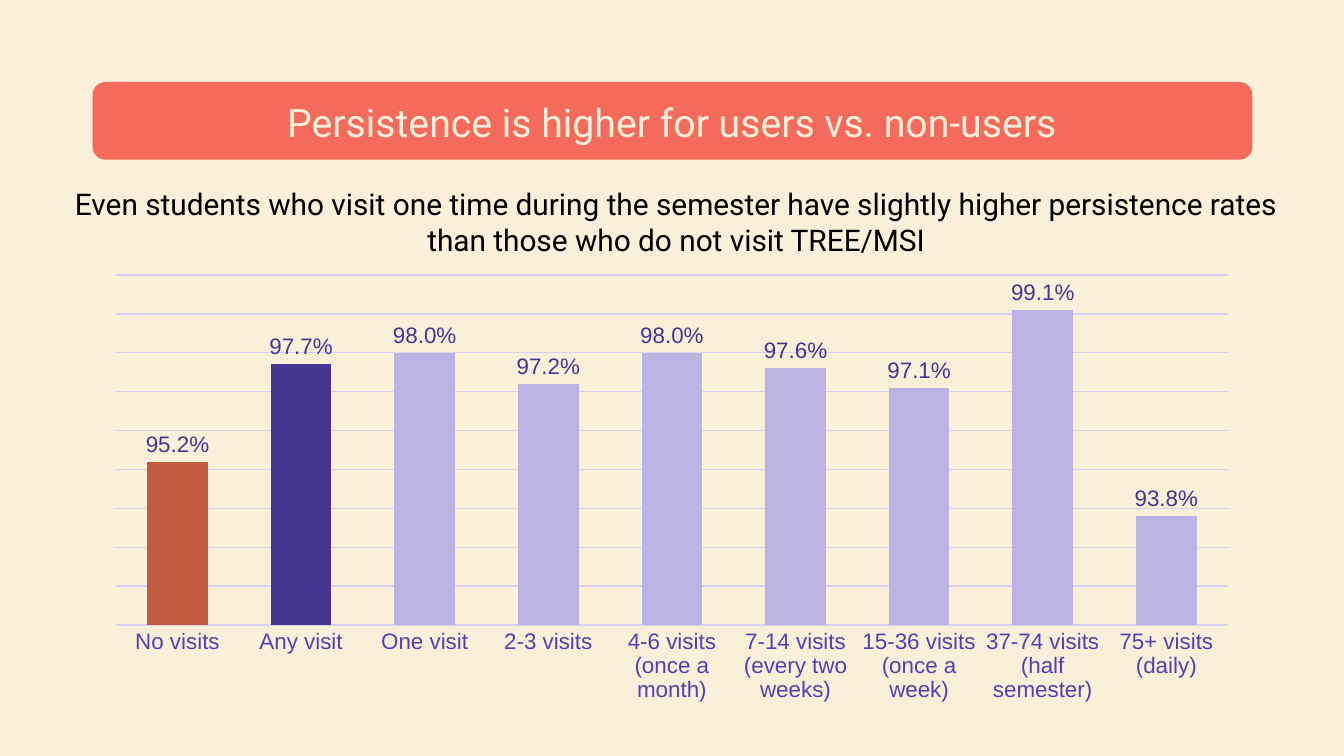
import pptx
import pptx.chart.data
import pptx.dml.color
import pptx.enum.chart
import pptx.enum.shapes
import pptx.enum.text
import pptx.oxml
import pptx.util
from pptx.util import Cm

COLORS = {
    "background": "FAEFD9",
    "banner": "F46B5C",
    "text": "000000",
    "bar": "BBB4E3",
    "no_visits": "C15C41",
    "any_visit": "453691",
    "value": "453691",
    "category": "5341B0",
    "grid": "D6D2EE",
}

PERSISTENCE = {
    "No visits": 0.952,
    "Any visit": 0.977,
    "One visit": 0.98,
    "2-3 visits": 0.972,
    "4-6 visits (once a month)": 0.98,
    "7-14 visits (every two weeks)": 0.976,
    "15-36 visits (once a week)": 0.971,
    "37-74 visits (half semester)": 0.991,
    "75+ visits (daily)": 0.938,
}


def rgb(name):
    return pptx.dml.color.RGBColor.from_string(COLORS[name])


def set_fill(fill, color):
    fill.solid()
    fill.fore_color.rgb = rgb(color)


def set_font(font, name, size, color):
    font.name = name
    font.size = pptx.util.Pt(size)
    font.color.rgb = rgb(color)


def set_text(sp, text, size, color, anchor):
    tf = sp.text_frame
    tf.text = text
    tf.word_wrap = True
    tf.auto_size = pptx.enum.text.MSO_AUTO_SIZE.NONE
    tf.vertical_anchor = anchor
    p = tf.paragraphs[0]
    p.alignment = pptx.enum.text.PP_ALIGN.CENTER
    set_font(p.runs[0].font, "Roboto", size, color)
    return tf


def add_banner(s):
    sp = s.shapes.add_shape(pptx.enum.shapes.MSO_SHAPE.ROUNDED_RECTANGLE,
                            Cm(1.75), Cm(1.55), Cm(21.92), Cm(1.47))
    sp.shadow.inherit = False
    set_fill(sp.fill, "banner")
    sp.line.fill.background()
    # Send the banner behind the title
    s.shapes.title._element.addprevious(sp._element)


def add_title(s, text):
    sp = s.shapes.title
    sp.left, sp.top, sp.width, sp.height = Cm(2), Cm(1.5), Cm(21.4), Cm(1.6)
    tf = set_text(sp, text, 21, "background", pptx.enum.text.MSO_ANCHOR.MIDDLE)
    tf.margin_left = tf.margin_right = Cm(0.25)
    tf.margin_top = tf.margin_bottom = Cm(0.25)


def add_caption(s, text):
    sp = s.shapes.add_textbox(Cm(0.97), Cm(3.38), Cm(23.62), Cm(1.63))
    set_text(sp, text, 16, "text", pptx.enum.text.MSO_ANCHOR.TOP)


def set_plot_layout(chart, x, y, w, h):
    plot_area = chart._chartSpace.chart.plotArea
    for old in plot_area.findall(pptx.oxml.ns.qn("c:layout")):
        plot_area.remove(old)
    sizes = "".join(f'<c:{tag} val="{val}"/>'
                    for tag, val in zip("xywh", (x, y, w, h)))
    plot_area.insert(0, pptx.oxml.parse_xml(
        f'<c:layout {pptx.oxml.ns.nsdecls("c")}><c:manualLayout>'
        '<c:layoutTarget val="inner"/><c:xMode val="edge"/>'
        f'<c:yMode val="edge"/>{sizes}</c:manualLayout></c:layout>'))


def format_axes(chart):
    cat = chart.category_axis
    cat.major_tick_mark = pptx.enum.chart.XL_TICK_MARK.NONE
    set_font(cat.tick_labels.font, "Arial", 12, "category")

    val = chart.value_axis
    val.visible = False
    val.minimum_scale, val.maximum_scale, val.major_unit = 0.91, 1, 0.01
    val.tick_labels.number_format = "0.00%"
    val.tick_labels.number_format_is_linked = False
    for line in (cat.format.line, val.major_gridlines.format.line):
        line.color.rgb = rgb("grid")
        line.width = pptx.util.Pt(0.75)


def add_persistence_chart(s):
    data = pptx.chart.data.CategoryChartData(number_format="0.0%")
    data.categories = PERSISTENCE.keys()
    data.add_series("Series 1", PERSISTENCE.values())
    chart = s.shapes.add_chart(
        pptx.enum.chart.XL_CHART_TYPE.COLUMN_CLUSTERED,
        Cm(1.75), Cm(5.03), Cm(21.9), Cm(8.38), data).chart
    chart.has_title = False
    chart.has_legend = False
    set_font(chart.font, "Arial", 10, "text")
    set_plot_layout(chart, 0.02, 0.02, 0.96, 0.79)
    format_axes(chart)

    # Bars, with the two comparison groups highlighted
    plot = chart.plots[0]
    plot.gap_width, plot.overlap = 104, -27
    plot.vary_by_categories = False
    series = plot.series[0]
    series.invert_if_negative = False
    set_fill(series.format.fill, "bar")
    for i, color in enumerate(("no_visits", "any_visit")):
        set_fill(series.points[i].format.fill, color)

    # Value labels
    labels = series.data_labels
    labels.show_value = True
    labels.position = pptx.enum.chart.XL_LABEL_POSITION.OUTSIDE_END
    labels.number_format = "0.0%"
    labels.number_format_is_linked = False
    set_font(labels.font, "Arial", 12, "value")


def main():
    prs = pptx.Presentation()
    prs.slide_width, prs.slide_height = Cm(25.4), Cm(14.29)
    s = prs.slides.add_slide(prs.slide_layouts[5])
    set_fill(s.background.fill, "background")

    add_banner(s)
    add_title(s, "Persistence is higher for users vs. non-users")
    add_persistence_chart(s)
    add_caption(s, "Even students who visit one time during the semester have "
                   "slightly higher persistence rates than those who do not "
                   "visit TREE/MSI")
    prs.save("out.pptx")


if __name__ == "__main__":
    main()
